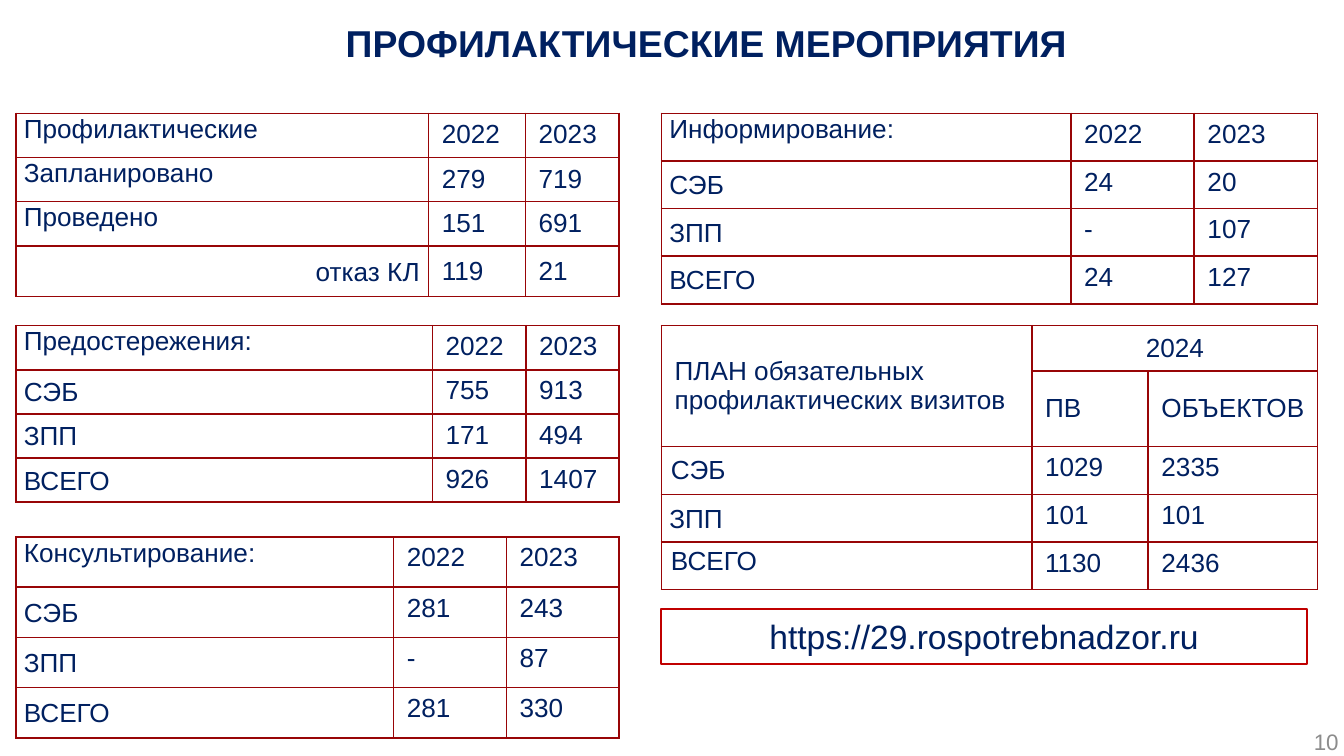
from lxml.etree import SubElement
from pptx import Presentation
from pptx.dml.color import RGBColor
from pptx.enum.shapes import MSO_SHAPE
from pptx.enum.text import MSO_ANCHOR as Anchor, PP_ALIGN as Align
from pptx.oxml.ns import qn
from pptx.util import Cm, Pt

NAVY = RGBColor(0x00, 0x20, 0x60)
MAROON = RGBColor(0x98, 0x05, 0x07)
RED = RGBColor(0xC0, 0x00, 0x00)
GREY = RGBColor(0x8C, 0x8C, 0x8C)

# Cell margins in cm: left, top, right, bottom
LABEL_MARGINS = (0.15, 0.03, 0.03, 0)
PLAN_LABEL_MARGINS = (0.18, 0.09, 0.18, 0.09)
VALUE_MARGINS = (0.25, 0.12, 0.24, 0.12)

LEFT, RIGHT = 0.3, 12.5
TOP, MIDDLE = 2.14, 6.15


def style_text(frame, text, size, color=NAVY, align=Align.LEFT, bold=False):
    frame.word_wrap = True
    paragraph = frame.paragraphs[0]
    paragraph.text = text
    paragraph.alignment = align
    font = paragraph.font
    font.name, font.size, font.bold = "Arial", Pt(size), bold
    font.color.rgb = color


def add_label(slide, box, text, size, color, align, bold=False):
    frame = slide.shapes.add_textbox(*map(Cm, box)).text_frame
    frame.vertical_anchor = Anchor.MIDDLE
    style_text(frame, text, size, color, align, bold)
    return frame


def set_margins(target, margins):
    (target.margin_left, target.margin_top,
     target.margin_right, target.margin_bottom) = map(Cm, margins)


def frame_cell(cell):
    """Draw a maroon border on every side and leave the cell unfilled."""
    properties = cell._tc.get_or_add_tcPr()
    for side in ("lnL", "lnR", "lnT", "lnB"):
        line = SubElement(properties, qn(f"a:{side}"), w=str(Pt(1)))
        fill = SubElement(line, qn("a:solidFill"))
        SubElement(fill, qn("a:srgbClr"), val=str(MAROON))
    cell.fill.background()


def add_grid(slide, left, top, widths, heights, rows):
    """Table with a label column, a heading row and values; lengths in cm."""
    table = slide.shapes.add_table(
        len(rows), len(widths), Cm(left), Cm(top),
        Cm(sum(widths)), Cm(sum(heights))).table
    table.first_row = table.horz_banding = False
    for column, width in zip(table.columns, widths):
        column.width = Cm(width)
    for row, height in zip(table.rows, heights):
        row.height = Cm(height)
    for r, texts in enumerate(rows):
        for c, text in enumerate(texts):
            cell = table.cell(r, c)
            frame_cell(cell)
            set_margins(cell, VALUE_MARGINS if c else LABEL_MARGINS)
            is_row_label = c == 0 and r > 0
            cell.vertical_anchor = Anchor.MIDDLE if is_row_label else Anchor.TOP
            style_text(cell.text_frame, text, 14)
    return table


def add_yearly_table(slide, left, top, widths, row_height, heading, *values):
    labels = (heading, "СЭБ", "ЗПП", "ВСЕГО")
    rows = [(label, *pair)
            for label, pair in zip(labels, (("2022", "2023"), *values))]
    add_grid(slide, left, top, widths, [row_height] * 4, rows)


def add_visits_table(slide, left, top):
    table = add_grid(slide, left, top, (7.8, 1.83, 1.77), (0.81, 0.81, 0.81, 0.96), [
        ("Профилактические", "2022", "2023"),
        ("Запланировано", "279", "719"),
        ("Проведено", "151", "691"),
        ("отказ КЛ ", "119", "21"),
    ])
    for r in range(1, 4):
        for c in (1, 2):
            table.cell(r, c).vertical_anchor = Anchor.MIDDLE
    for r in (1, 2):
        table.cell(r, 0).vertical_anchor = Anchor.TOP
    table.cell(3, 0).text_frame.paragraphs[0].alignment = Align.RIGHT


def add_plan_table(slide, left, top):
    table = add_grid(slide, left, top, (7, 2.2, 3.2), (0.86, 1.37, 0.9, 0.9, 0.9), [
        ("ПЛАН обязательных профилактических визитов", "2024", ""),
        ("", "ПВ", "ОБЪЕКТОВ"),
        ("СЭБ", "1029", "2335"),
        ("ЗПП", "101", "101"),
        ("ВСЕГО", "1130", "2436"),
    ])
    heading, year = table.cell(0, 0), table.cell(0, 1)
    heading.merge(table.cell(1, 0))
    year.merge(table.cell(0, 2))
    set_margins(heading, VALUE_MARGINS)
    year.text_frame.paragraphs[0].alignment = Align.CENTER
    for cell in (heading, year, table.cell(1, 1), table.cell(1, 2)):
        cell.vertical_anchor = Anchor.MIDDLE
    for r in (2, 4):
        set_margins(table.cell(r, 0), PLAN_LABEL_MARGINS)
    table.cell(4, 0).vertical_anchor = Anchor.TOP


def add_address(slide, box):
    address = slide.shapes.add_shape(MSO_SHAPE.RECTANGLE, *map(Cm, box))
    address.shadow.inherit = False
    address.fill.background()
    address.line.color.rgb = RED
    address.line.width = Pt(1)
    style_text(address.text_frame, "https://29.rospotrebnadzor.ru", 18,
               align=Align.CENTER)


def main():
    deck = Presentation()
    deck.slide_width, deck.slide_height = Cm(25.4), Cm(14.28)
    slide = deck.slides.add_slide(deck.slide_layouts[6])

    add_label(slide, (1.3, 0, 24.1, 1.6), "ПРОФИЛАКТИЧЕСКИЕ МЕРОПРИЯТИЯ",
              20, NAVY, Align.CENTER, bold=True)
    page_number = add_label(slide, (23.7, 13.74, 1.7, 0.54), "10",
                            12, GREY, Align.RIGHT)
    set_margins(page_number, (0, 0, 0.1, 0))

    add_visits_table(slide, LEFT, TOP)
    add_yearly_table(slide, LEFT, MIDDLE, (7.87, 1.77, 1.76), 0.81,
                     "Предостережения:",
                     ("755", "913"), ("171", "494"), ("926", "1407"))
    add_yearly_table(slide, LEFT, 10.14, (7.14, 2.13, 2.13), 0.95,
                     "Консультирование:",
                     ("281", "243"), ("-", "87"), ("281", "330"))
    add_yearly_table(slide, RIGHT, TOP, (7.74, 2.33, 2.33), 0.9,
                     "Информирование:",
                     ("24", "20"), ("-", "107"), ("24", "127"))
    add_plan_table(slide, RIGHT, MIDDLE)
    add_address(slide, (RIGHT, 11.5, 12.2, 1.04))

    deck.save("out.pptx")


if __name__ == "__main__":
    main()
